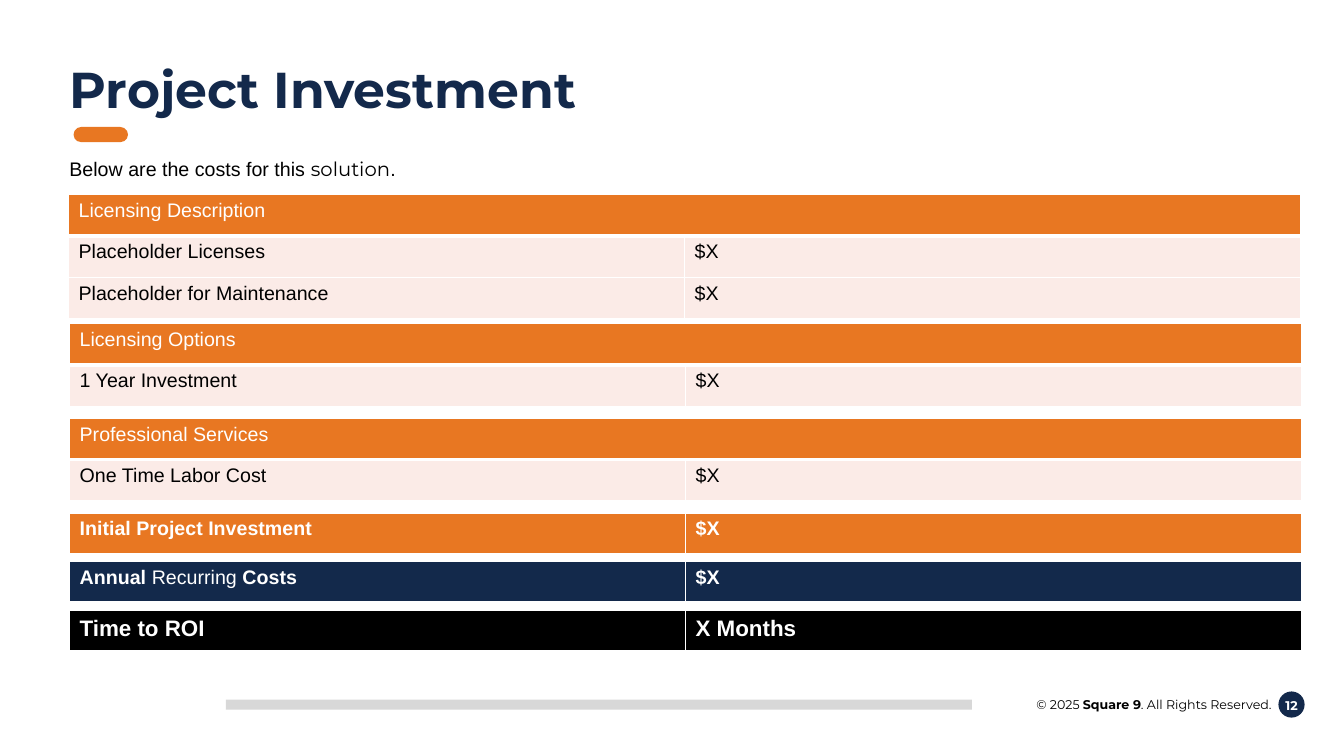
"""Build the project investment slide with its cost tables."""
from dataclasses import dataclass
from lxml.etree import SubElement
from pptx import Presentation
from pptx.dml.color import RGBColor
from pptx.enum.shapes import MSO_SHAPE
from pptx.enum.text import PP_ALIGN
from pptx.oxml.ns import qn
from pptx.util import Pt


@dataclass(frozen=True)
class Theme:
    navy: str = "13294B"
    orange: str = "E87722"
    blush: str = "FBEBE7"
    gray: str = "D8D8D8"
    white: str = "FFFFFF"
    black: str = "000000"
    brand: str = "Montserrat"
    plain: str = "Arial"
    title: int = 36
    total: int = 16
    body: int = 14
    small: int = 9


theme = Theme()
PX = 9144


def write(frame, runs, size, color, align=PP_ALIGN.LEFT, space=None):
    para = frame.paragraphs[0]
    para.alignment = align
    para.line_spacing = space
    faces = {face for _, face, _ in runs}
    bolds = {bold for _, _, bold in runs}
    para.font.size = Pt(size)
    para.font.color.rgb = RGBColor.from_string(color)
    if len(faces) == 1:
        para.font.name = runs[0][1]
    if len(bolds) == 1:
        para.font.bold = runs[0][2]
    for text, face, bold in runs:
        run = para.add_run()
        run.text = text
        if len(faces) > 1:
            run.font.name = face
        if len(bolds) > 1:
            run.font.bold = bold


def paint(cell, color, top, base):
    props = cell._tc.get_or_add_tcPr()
    for side, width in (("L", 1), ("R", 1), ("T", top), ("B", base)):
        line = SubElement(props, qn(f"a:ln{side}"), w=str(Pt(width)))
        fill = SubElement(line, qn("a:solidFill"))
        SubElement(fill, qn("a:srgbClr"), val=theme.white)
    cell.fill.solid()
    cell.fill.fore_color.rgb = RGBColor.from_string(color)


deck = Presentation()
deck.slide_width, deck.slide_height = 1333 * PX, 750 * PX
slide = deck.slides.add_slide(deck.slide_layouts[6])
shapes = slide.shapes

marks = [
    (MSO_SHAPE.OVAL, (1268, 686, 26, 26), theme.navy),
    (MSO_SHAPE.RECTANGLE, (224, 694, 740, 10), theme.gray),
    (MSO_SHAPE.ROUNDED_RECTANGLE, (73, 126, 54, 15), theme.orange),
]
for kind, box, color in marks:
    mark = shapes.add_shape(kind, *(n * PX for n in box))
    mark.shadow.inherit = False
    mark.fill.solid()
    mark.fill.fore_color.rgb = RGBColor.from_string(color)
    mark.line.fill.background()
    if kind == MSO_SHAPE.ROUNDED_RECTANGLE:
        mark.adjustments[0] = 0.5

rights = [
    ("© 2025 ", theme.brand, False),
    ("Square 9", theme.brand, True),
    (". All Rights Reserved.", theme.brand, False),
]
intro = [
    ("Below are the costs for this ", theme.plain, False),
    ("solution", theme.brand, False),
    (".", theme.plain, False),
]
texts = [
    ((1259, 687, 44, 25), [("12", theme.brand, True)],
     theme.small, theme.white, PP_ALIGN.CENTER, None),
    ((961, 686, 310, 25), rights,
     theme.small, theme.black, PP_ALIGN.RIGHT, None),
    ((59, 60, 1215, 64), [("Project Investment", theme.brand, True)],
     theme.title, theme.navy, PP_ALIGN.LEFT, 0.9),
    ((59, 153, 1243, 35), intro,
     theme.body, theme.black, PP_ALIGN.LEFT, 0.9),
]
for box, runs, size, color, align, space in texts:
    frame = shapes.add_textbox(*(n * PX for n in box)).text_frame
    frame.word_wrap = True
    write(frame, runs, size, color, align, space)

WIDE, TALL = 611, 41
groups = [
    (68, 193, "Licensing Description",
     ["Placeholder Licenses", "Placeholder for Maintenance"]),
    (69, 321, "Licensing Options", ["1 Year Investment"]),
    (69, 415, "Professional Services", ["One Time Labor Cost"]),
]
sums = [
    (509, [("Initial Project Investment", True)], "$X",
     theme.orange, theme.body),
    (557, [("Annual ", True), ("Recurring ", False), ("Costs", True)], "$X",
     theme.navy, theme.body),
    (606, [("Time to ROI", True)], "X Months", theme.black, theme.total),
]
tables = []
for left, top, head, items in groups:
    rows = [([(head, False)], None, theme.orange, theme.white, theme.body)]
    rows += [([(item, False)], [("$X", False)], theme.blush, theme.black,
              theme.body) for item in items]
    tables.append((left, top, rows))
for top, label, value, color, size in sums:
    row = (label, [(value, True)], color, theme.white, size)
    tables.append((69, top, [row]))

for left, top, rows in tables:
    box = (left, top, 2 * WIDE, len(rows) * TALL)
    grid = shapes.add_table(len(rows), 2, *(n * PX for n in box)).table
    for i, (label, value, color, ink, size) in enumerate(rows):
        for j, parts in enumerate((label, value)):
            cell = grid.cell(i, j)
            paint(cell, color, 3 if i == 1 else 1, 3 if i == 0 else 1)
            if parts:
                runs = [(text, theme.plain, bold) for text, bold in parts]
                write(cell.text_frame, runs, size, ink)
        if value is None:
            grid.cell(i, 0).merge(grid.cell(i, 1))

deck.save("out.pptx")
